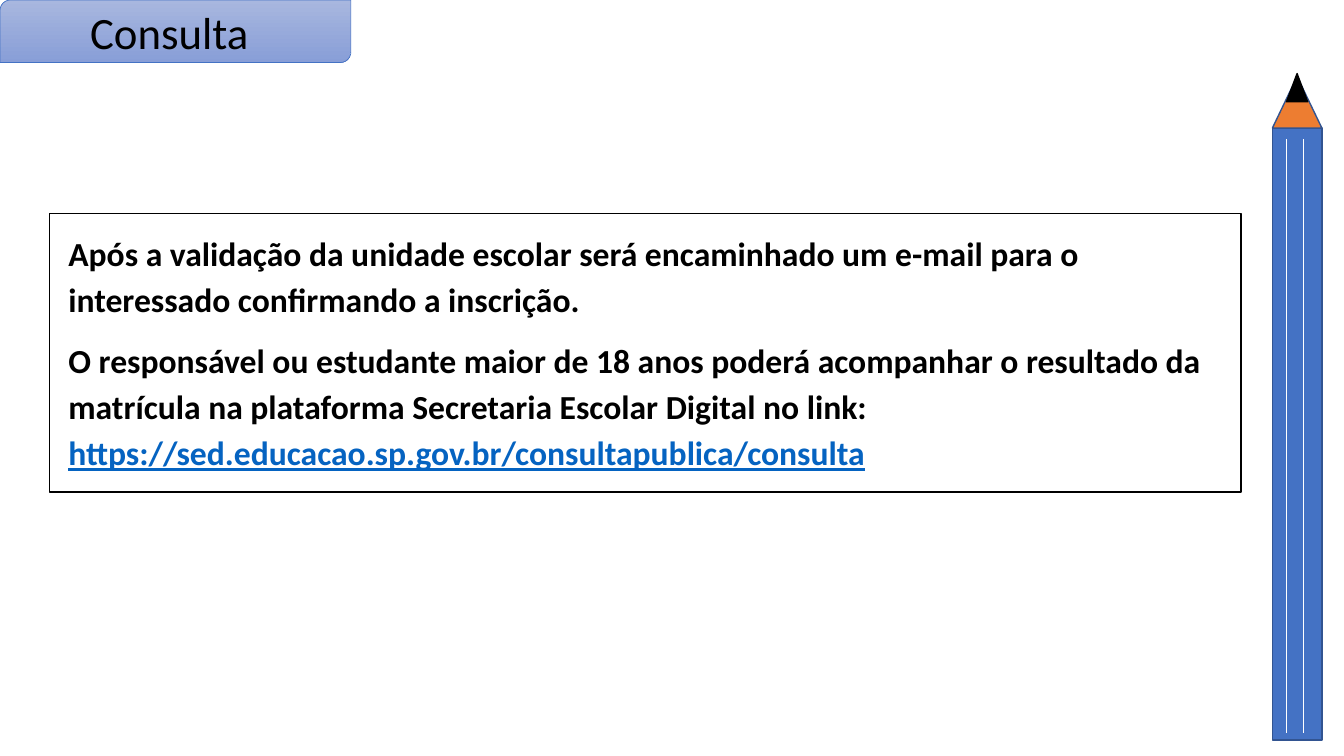
import pptx
import pptx.dml.color
import pptx.enum.shapes
import pptx.enum.text
import pptx.oxml
import pptx.oxml.ns
import pptx.util

Inches = pptx.util.Inches
Pt = pptx.util.Pt
SHAPE = pptx.enum.shapes.MSO_SHAPE
BLACK = "000000"
OUTLINE = "325491"
NOTICE = [
    ["Após a validação da unidade escolar será encaminhado um e-mail para o interessado "
     "confirmando a inscrição."],
    ["O responsável ou estudante maior de 18 anos poderá acompanhar o resultado da matrícula "
     "na plataforma Secretaria Escolar Digital no link: ",
     "https://sed.educacao.sp.gov.br/consultapublica/consulta"],
]


def rgb(value):
    """Turn a hex string into a colour."""
    return pptx.dml.color.RGBColor.from_string(value)


def add_outlined(s, kind, box, fill, line, width=1):
    """Add a preset shape with an outline; no fill when fill is None."""
    sp = s.shapes.add_shape(kind, *map(Inches, box))
    sp.shadow.inherit = False
    if fill is None:
        sp.fill.background()
    else:
        sp.fill.solid()
        sp.fill.fore_color.rgb = rgb(fill)
    sp.line.color.rgb = rgb(line)
    sp.line.width = Pt(width)
    return sp


def add_stripe(s, x, top, bottom):
    """Add a thin white vertical line."""
    line = s.shapes.add_connector(
        pptx.enum.shapes.MSO_CONNECTOR.STRAIGHT,
        Inches(x), Inches(top), Inches(x), Inches(bottom))
    line.line.color.rgb = rgb("FFFFFF")
    line.line.width = Pt(0.5)
    sp_pr = line._element.spPr
    sp_pr.append(pptx.oxml.parse_xml(f'<a:effectLst {pptx.oxml.ns.nsdecls("a")}/>'))


def add_pencil(s):
    """Draw the pencil at the right edge."""
    add_outlined(s, SHAPE.RECTANGLE, (12.62, 1.27, 0.49, 6.07), "4472C4", OUTLINE)
    add_outlined(s, SHAPE.ISOSCELES_TRIANGLE, (12.62, 0.76, 0.49, 0.51), "ED7D31", OUTLINE)
    add_outlined(s, SHAPE.ISOSCELES_TRIANGLE, (12.76, 0.73, 0.21, 0.28), BLACK, BLACK)
    for x in (12.76, 12.93):
        add_stripe(s, x, 1.38, 7.27)


def style_run(r, size, color=BLACK, bold=False, underline=False):
    """Format one run."""
    r.font.name = "Calibri"
    r.font.size = Pt(size)
    r.font.color.rgb = rgb(color)
    r.font.bold = bold
    r.font.underline = underline


def add_title(s, text):
    """Place the title over a gradient tab in the top left corner."""
    tab = add_outlined(s, SHAPE.ROUND_2_DIAG_RECTANGLE, (0, 0, 3.48, 0.62),
                       "A8B7DF", "4472C4", 0.5)
    tab.fill.gradient()
    tab.fill.gradient_angle = 270
    for stop, color in zip(tab.fill.gradient_stops, ("A8B7DF", "889ED7")):
        stop.color.rgb = rgb(color)
    title = s.shapes.title
    title.left, title.top, title.width, title.height = map(Inches, (0, 0, 3.36, 0.62))
    s.shapes._spTree.append(title._element)
    tf = title.text_frame
    tf.text = text
    tf.auto_size = pptx.enum.text.MSO_AUTO_SIZE.NONE
    tf.vertical_anchor = pptx.enum.text.MSO_ANCHOR.MIDDLE
    p = tf.paragraphs[0]
    p.alignment = pptx.enum.text.PP_ALIGN.CENTER
    style_run(p.runs[0], 32)


def add_notice(s, paragraphs):
    """Add the notice; a second part of a paragraph is styled as a web address."""
    tf = s.shapes.add_textbox(*map(Inches, (0.58, 2.2, 11.66, 2.6))).text_frame
    tf.word_wrap = True
    for i, (body, *addresses) in enumerate(paragraphs):
        p = tf.add_paragraph() if i else tf.paragraphs[0]
        p.text = body
        p.line_spacing = 1.15
        p.space_after = Pt(10)
        style_run(p.runs[0], 24, bold=True)
        for address in addresses:
            r = p.add_run()
            r.text = address
            style_run(r, 24, "0563C1", bold=True, underline=True)
    add_outlined(s, SHAPE.RECTANGLE, (0.49, 2.12, 11.82, 2.76), None, BLACK)


def main():
    """Build and save the slide."""
    prs = pptx.Presentation()
    prs.slide_width = Inches(13.33)
    prs.slide_height = Inches(7.5)
    s = prs.slides.add_slide(prs.slide_layouts[5])
    add_pencil(s)
    add_title(s, "Consulta")
    add_notice(s, NOTICE)
    prs.save("out.pptx")


if __name__ == "__main__":
    main()
